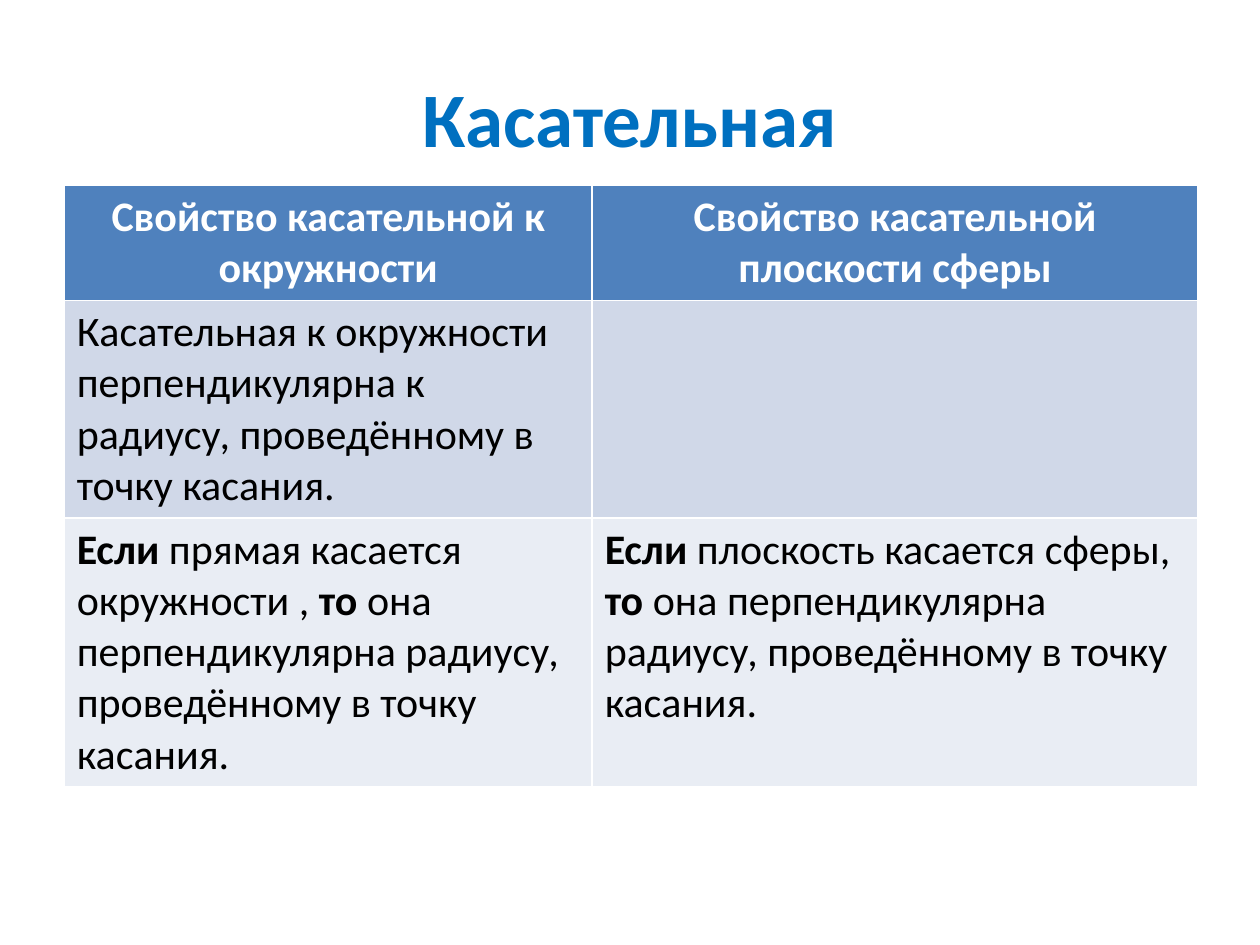
import pptx
import pptx.util
import pptx.dml.color
import pptx.enum.text

Inches = pptx.util.Inches
COLORS = {"title": "0070C0", "header": "4F81BD", "band": "D0D8E8",
          "light": "E9EDF4", "white": "FFFFFF", "black": "000000"}
FONT = "Calibri"
COLUMN_WIDTHS = (4.19, 4.81)
ROW_HEIGHTS = (0.51, 1.26, 1.26)
ROW_FILLS = ("header", "band", "light")
ENDING = (" она перпендикулярна радиусу, проведённому в точку касания.", False)
ROWS = (
    ([("Свойство касательной к окружности", True)],
     [("Свойство касательной плоскости сферы", True)]),
    ([("Касательная к окружности перпендикулярна к радиусу, "
       "проведённому в точку касания.", False)],
     []),
    ([("Если", True), (" прямая касается окружности , ", False), ("то", True), ENDING],
     [("Если", True), (" плоскость касается сферы, ", False), ("то", True), ENDING]),
)


def color(name):
    """Return the named colour."""
    return pptx.dml.color.RGBColor.from_string(COLORS[name])


def add_span(para, text, size, tint, bold):
    """Add one formatted run to a paragraph."""
    span = para.add_run()
    span.text = text
    span.font.name = FONT
    span.font.size = pptx.util.Pt(size)
    span.font.bold = bold
    span.font.color.rgb = color(tint)


def place_title(page, left, top, width, height):
    """Fill and position the title placeholder."""
    box = page.shapes.title
    box.left, box.top, box.width, box.height = map(Inches, (left, top, width, height))
    box.text_frame.vertical_anchor = pptx.enum.text.MSO_ANCHOR.MIDDLE
    para = box.text_frame.paragraphs[0]
    para.alignment = pptx.enum.text.PP_ALIGN.CENTER
    add_span(para, "Касательная", 44, "title", True)


def place_comparison(page, left, top, width, height):
    """Build the table comparing the circle and sphere properties."""
    table = page.shapes.add_table(len(ROWS), len(COLUMN_WIDTHS), Inches(left),
                                  Inches(top), Inches(width), Inches(height)).table
    for column, column_width in zip(table.columns, COLUMN_WIDTHS):
        column.width = Inches(column_width)
    for index, (row, row_height) in enumerate(zip(table.rows, ROW_HEIGHTS)):
        row.height = Inches(row_height)
        for cell, spans in zip(row.cells, ROWS[index]):
            cell.fill.solid()
            cell.fill.fore_color.rgb = color(ROW_FILLS[index])
            para = cell.text_frame.paragraphs[0]
            if index == 0:
                para.alignment = pptx.enum.text.PP_ALIGN.CENTER
            for text, bold in spans:
                add_span(para, text, 24, "black" if index else "white", bold)


def main():
    """Create the deck and save it."""
    deck = pptx.Presentation()
    deck.slide_width, deck.slide_height = Inches(10), Inches(7.5)
    page = deck.slides.add_slide(deck.slide_layouts.get_by_name("Title Only"))
    place_title(page, 0.5, 0.3, 9, 1.25)
    place_comparison(page, 0.51, 1.47, sum(COLUMN_WIDTHS), sum(ROW_HEIGHTS))
    deck.save("out.pptx")


if __name__ == "__main__":
    main()
